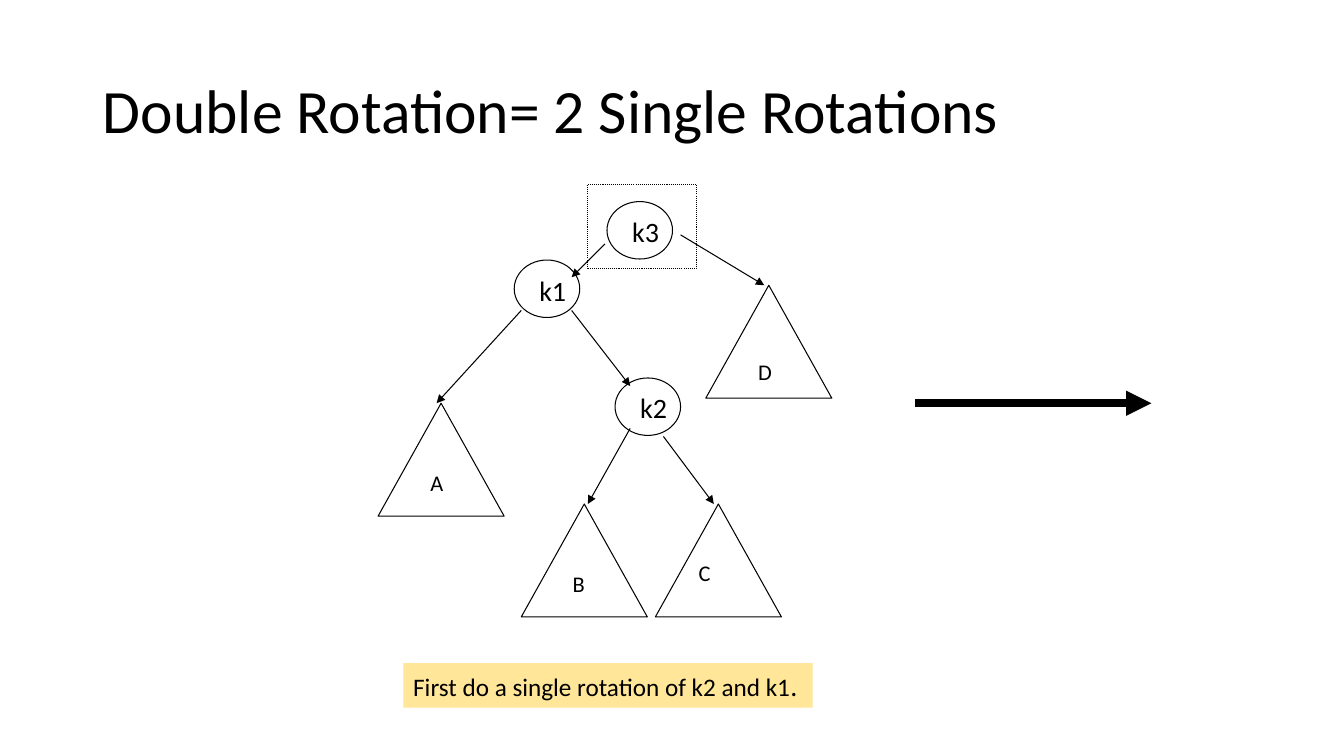
from lxml import etree
from pptx import Presentation
from pptx.dml.color import RGBColor
from pptx.enum.dml import MSO_LINE
from pptx.enum.shapes import MSO_CONNECTOR, MSO_SHAPE
from pptx.enum.text import MSO_ANCHOR, MSO_AUTO_SIZE, PP_ALIGN
from pptx.oxml.ns import qn
from pptx.util import Inches, Pt

COLORS = {"ink": "000000", "note": "FFE699"}
FONT = "Calibri"

NODE_SIZE = (0.65, 0.57)
SUBTREE_SIZE = (1.25, 1.12)

# name, left, top of the ellipse
NODES = [("k3", 6.02, 2), ("k1", 5.1, 2.58), ("k2", 6.1, 3.75)]

# name, left and top of the triangle, left and top of the label, label width
SUBTREES = [
    ("A", 3.75, 4, 4.17, 4.61, 0.33),
    ("B", 5.17, 5, 5.58, 5.61, 0.32),
    ("C", 6.5, 5, 6.83, 5.5, 0.32),
    ("D", 7, 2.83, 7.42, 3.5, 0.34),
]

TREE_EDGES = [
    ((6, 2.42), (5.67, 2.75)),
    ((6.75, 2.33), (7.58, 2.83)),
    ((5.17, 3.08), (4.33, 4)),
    ((5.67, 3.08), (6.25, 3.83)),
    ((6.25, 4.25), (5.83, 5)),
    ((6.58, 4.33), (7.08, 5)),
]


def color(name):
    return RGBColor.from_string(COLORS[name])


def add_run(paragraph, text, size):
    run = paragraph.add_run()
    run.text = text
    run.font.name = FONT
    run.font.size = Pt(size)
    run.font.color.rgb = color("ink")


def add_title(slide, text):
    title = slide.shapes.title
    title.left, title.top = Inches(0.92), Inches(0.4)
    title.width, title.height = Inches(11.5), Inches(1.45)
    frame = title.text_frame
    frame.word_wrap = True
    frame.auto_size = MSO_AUTO_SIZE.NONE
    frame.vertical_anchor = MSO_ANCHOR.MIDDLE
    paragraph = frame.paragraphs[0]
    paragraph.alignment = PP_ALIGN.LEFT
    paragraph.line_spacing = 0.9
    add_run(paragraph, text, 44)


def add_text(slide, runs, left, top, width, height, wrap=False):
    """Add a one-paragraph text box; runs holds (text, size) pairs."""
    box = slide.shapes.add_textbox(
        Inches(left), Inches(top), Inches(width), Inches(height))
    frame = box.text_frame
    frame.word_wrap = wrap
    frame.auto_size = MSO_AUTO_SIZE.SHAPE_TO_FIT_TEXT
    for text, size in runs:
        add_run(frame.paragraphs[0], text, size)
    return box


def add_outline(slide, kind, left, top, width, height):
    """Add an unfilled preset shape with a thin line."""
    shape = slide.shapes.add_shape(
        kind, Inches(left), Inches(top), Inches(width), Inches(height))
    shape.shadow.inherit = False
    shape.fill.background()
    shape.line.color.rgb = color("ink")
    shape.line.width = Pt(0.75)
    return shape


def add_node(slide, name, left, top):
    add_outline(slide, MSO_SHAPE.OVAL, left, top, *NODE_SIZE)
    add_text(slide, [(name, 20)], left + 0.15, top + 0.08, 0.48, 0.43, wrap=True)


def add_subtree(slide, name, left, top, label_left, label_top, label_width):
    add_outline(slide, MSO_SHAPE.FLOWCHART_EXTRACT, left, top, *SUBTREE_SIZE)
    add_text(slide, [(name, 16)], label_left, label_top, label_width, 0.37)


def add_arrow(slide, start, end, weight=0.75):
    points = [Inches(value) for value in (*start, *end)]
    arrow = slide.shapes.add_connector(MSO_CONNECTOR.STRAIGHT, *points)
    arrow.line.color.rgb = color("ink")
    arrow.line.width = Pt(weight)
    etree.SubElement(arrow.line._get_or_add_ln(), qn("a:tailEnd"), type="triangle")
    etree.SubElement(arrow._element.spPr, qn("a:effectLst"))


def main():
    presentation = Presentation()
    presentation.slide_width = Inches(13.33)
    presentation.slide_height = Inches(7.5)
    slide = presentation.slides.add_slide(presentation.slide_layouts[5])

    add_title(slide, "Double Rotation= 2 Single Rotations")
    for node in NODES:
        add_node(slide, *node)
    root_frame = add_outline(slide, MSO_SHAPE.RECTANGLE, 5.83, 1.83, 1.08, 0.83)
    root_frame.line.dash_style = MSO_LINE.ROUND_DOT
    for subtree in SUBTREES:
        add_subtree(slide, *subtree)
    for start, end in TREE_EDGES:
        add_arrow(slide, start, end)

    note = add_text(
        slide,
        [("First do a single rotation of k2 and k1", 18), (".", 20)],
        4, 6.58, 4.06, 0.44)
    note.fill.solid()
    note.fill.fore_color.rgb = color("note")
    add_arrow(slide, (9.08, 4), (11.42, 4), weight=6)

    presentation.save("out.pptx")


if __name__ == "__main__":
    main()
